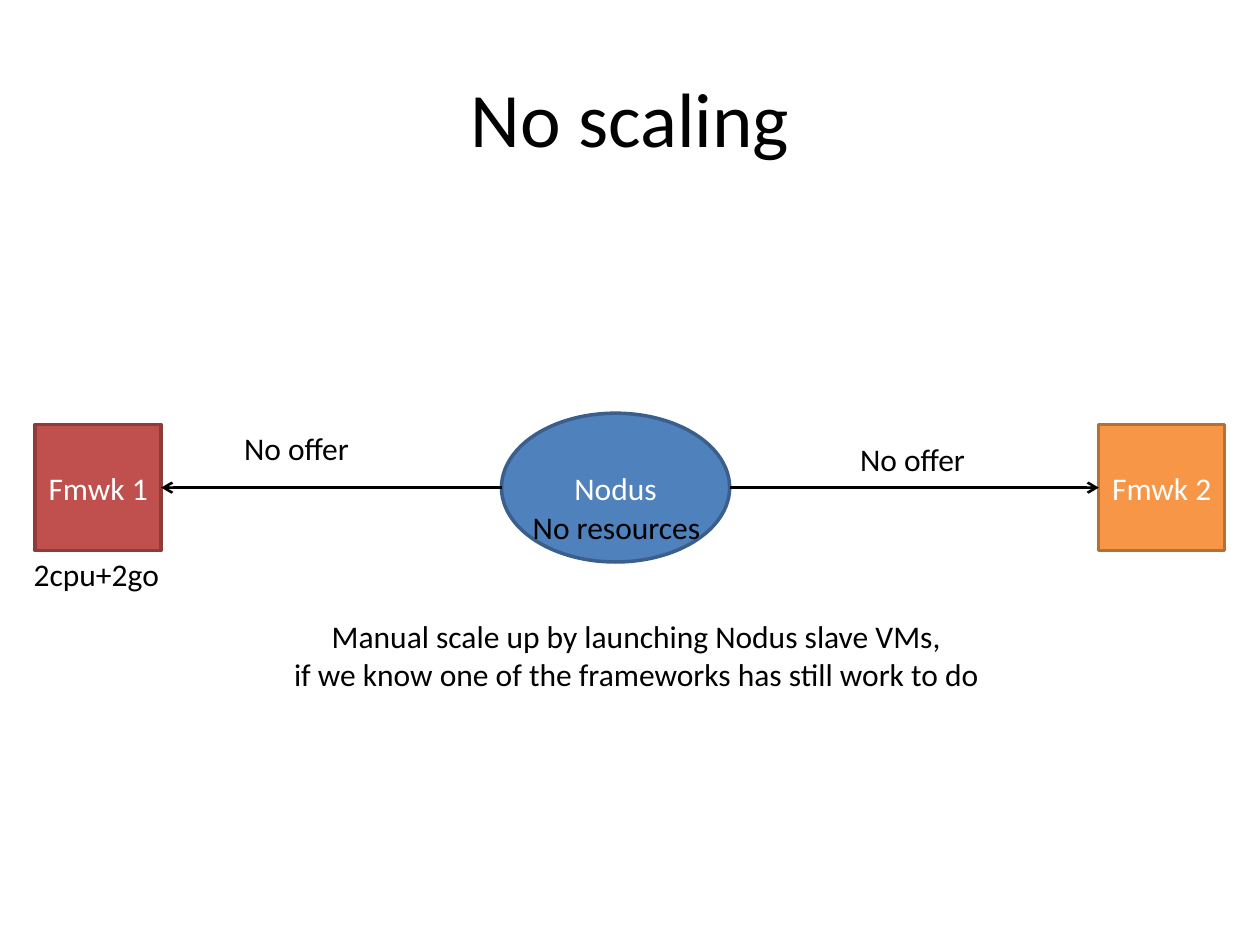
import pptx
import pptx.util
import pptx.dml.color
import pptx.enum.shapes
import pptx.enum.text
import lxml.etree
import pptx.oxml.ns

Cm = pptx.util.Cm
Pt = pptx.util.Pt
RGB = pptx.dml.color.RGBColor
KIND = pptx.enum.shapes.MSO_SHAPE
LEFT = pptx.enum.text.PP_ALIGN.LEFT
MID = pptx.enum.text.PP_ALIGN.CENTER

BLACK = RGB(0x00, 0x00, 0x00)
WHITE = RGB(0xFF, 0xFF, 0xFF)
BLUE = RGB(0x4F, 0x81, 0xBD)
NAVY = RGB(0x3A, 0x5F, 0x8C)
RED = RGB(0xC0, 0x50, 0x4D)
MAROON = RGB(0x8E, 0x3B, 0x39)
ORANGE = RGB(0xF7, 0x96, 0x46)
BROWN = RGB(0xB7, 0x6F, 0x34)

AXIS = 9.83
SIDE = 2.54


def write(frame, text, size=18, color=BLACK, align=LEFT):
    """Fill a text frame with one paragraph per line of text."""
    frame.text = text
    for para in frame.paragraphs:
        para.alignment = align
        para.font.name = "Calibri"
        para.font.size = Pt(size)
        para.font.color.rgb = color


def label(slide, text, left, top, width, height=1.02, **style):
    """Add a text box that grows with its unwrapped text."""
    box = slide.shapes.add_textbox(Cm(left), Cm(top), Cm(width), Cm(height))
    box.text_frame.word_wrap = False
    box.text_frame.auto_size = pptx.enum.text.MSO_AUTO_SIZE.SHAPE_TO_FIT_TEXT
    write(box.text_frame, text, **style)


def title(slide, text):
    """Add the centred slide title."""
    box = slide.shapes.add_textbox(Cm(1.27), Cm(0.76), Cm(22.86), Cm(3.18))
    box.text_frame.word_wrap = True
    box.text_frame.vertical_anchor = pptx.enum.text.MSO_ANCHOR.MIDDLE
    write(box.text_frame, text, size=44, align=MID)


def node(slide, kind, text, left, width, height, fill, edge):
    """Add a filled shape centred on the axis."""
    shape = slide.shapes.add_shape(
        kind, Cm(left), Cm(AXIS - height / 2), Cm(width), Cm(height))
    shape.shadow.inherit = False
    shape.fill.solid()
    shape.fill.fore_color.rgb = fill
    shape.line.color.rgb = edge
    shape.line.width = Pt(2)
    shape.text_frame.vertical_anchor = pptx.enum.text.MSO_ANCHOR.MIDDLE
    write(shape.text_frame, text, color=WHITE, align=MID)
    return shape


def arrow(slide, start, goal, site):
    """Draw an arrow along the axis to a side of the goal."""
    line = slide.shapes.add_connector(
        pptx.enum.shapes.MSO_CONNECTOR.STRAIGHT,
        start, Cm(AXIS), goal.left, Cm(AXIS))
    line.end_connect(goal, site)
    line.line.color.rgb = BLACK
    line.line.width = Pt(1.5)
    qn = pptx.oxml.ns.qn
    tail = lxml.etree.SubElement(line.line._get_or_add_ln(), qn("a:tailEnd"))
    tail.set("type", "arrow")
    lxml.etree.SubElement(line._element.spPr, qn("a:effectLst"))


def main():
    """Build and save the slide."""
    deck = pptx.Presentation()
    deck.slide_width, deck.slide_height = Cm(25.4), Cm(19.05)
    slide = deck.slides.add_slide(deck.slide_layouts[6])

    title(slide, "No scaling")
    hub = node(slide, KIND.OVAL, "Nodus", 10.11, 4.6, 3, BLUE, NAVY)
    first = node(slide, KIND.RECTANGLE, "Fmwk 1", 0.71, SIDE, SIDE, RED, MAROON)
    second = node(slide, KIND.RECTANGLE, "Fmwk 2", 22.15, SIDE, SIDE, ORANGE, BROWN)
    arrow(slide, hub.left + hub.width, second, 1)
    arrow(slide, hub.left, first, 3)

    label(slide, "No offer", 4.67, 8.53, 2.67)
    label(slide, "No offer", 17.09, 8.74, 2.67)
    label(slide, "2cpu+2go", 0.43, 11.07, 3.07)
    label(slide, "No resources", 10.49, 10.11, 3.94)
    label(slide, "Manual scale up by launching Nodus slave VMs,\n"
          "if we know one of the frameworks has still work to do",
          5.59, 12.32, 14.48, 1.8, align=MID)
    deck.save("out.pptx")


if __name__ == "__main__":
    main()
